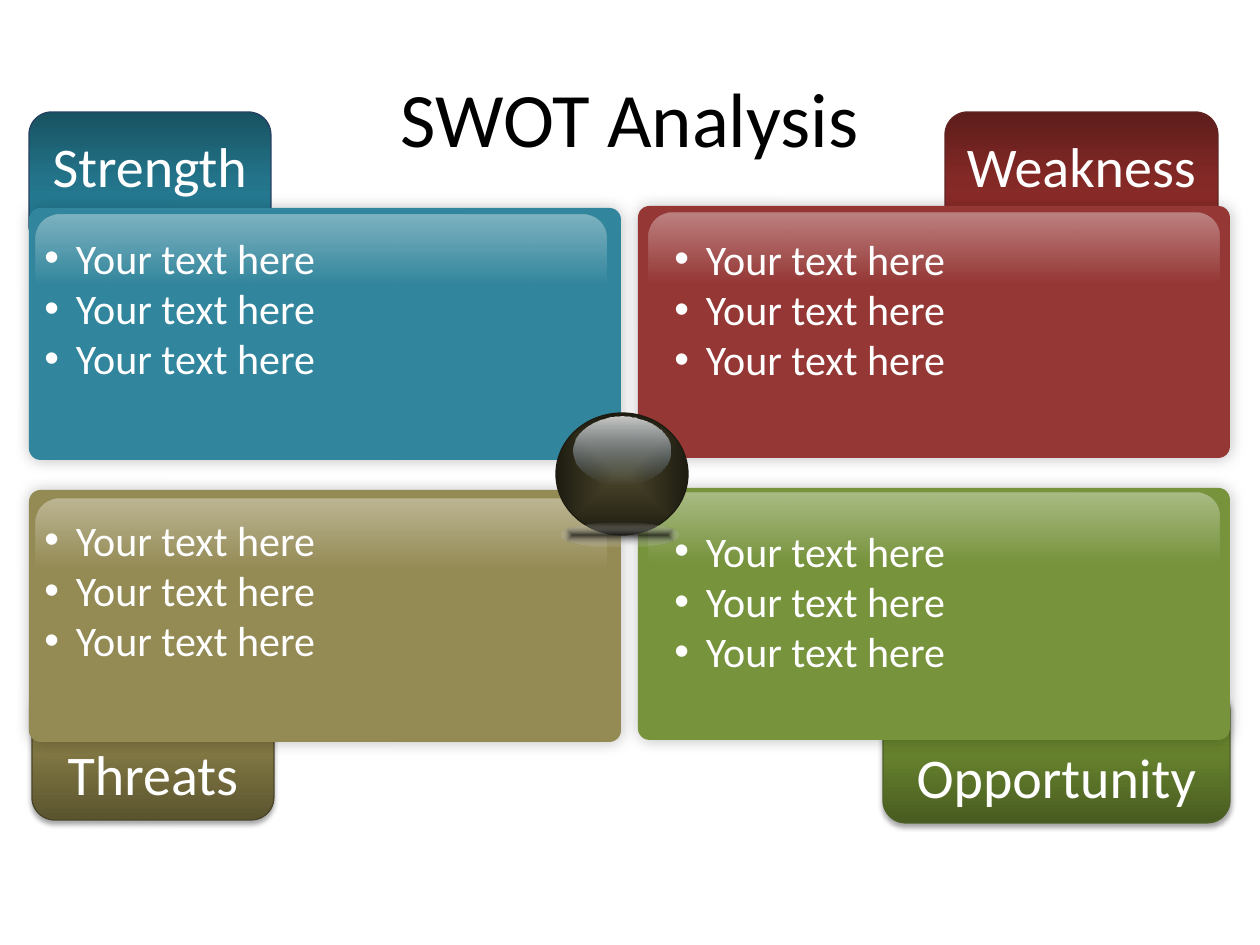
"""Build a SWOT analysis slide with four glossy panels around a dark orb."""
from lxml import etree
from pptx import Presentation
from pptx.dml.color import RGBColor
from pptx.enum.shapes import MSO_SHAPE
from pptx.enum.text import MSO_ANCHOR, MSO_AUTO_SIZE, PP_ALIGN
from pptx.oxml.ns import qn
from pptx.util import Emu, Pt

ROUND, OVAL = MSO_SHAPE.ROUNDED_RECTANGLE, MSO_SHAPE.OVAL
TOP, MIDDLE, BOTTOM = MSO_ANCHOR.TOP, MSO_ANCHOR.MIDDLE, MSO_ANCHOR.BOTTOM
CENTER, FIT_SHAPE = PP_ALIGN.CENTER, MSO_AUTO_SIZE.SHAPE_TO_FIT_TEXT

TITLE = "SWOT Analysis"
BULLETS = ["Your text here"] * 3
QUADRANTS = [
    dict(name="Opportunity", tab=(883, 687, 347), panel=(638, 488),
         text=(662, 519), gloss=(649, 493), upper=False),
    dict(name="Threats", tab=(32, 684, 242), panel=(29, 490),
         text=(32, 508), gloss=(36, 499), upper=False),
    dict(name="Strength", tab=(29, 112, 242), panel=(29, 208),
         text=(32, 226), gloss=(36, 215), upper=True),
    dict(name="Weakness", tab=(945, 112, 273), panel=(638, 206),
         text=(662, 227), gloss=(649, 213), upper=True),
]
TAB_H, PANEL_SIZE, TEXT_SIZE, GLOSS_SIZE = 136, (592, 252), (441, 165), (570, 140)
TITLE_BOX = (63, 38, 1134, 157)
ORB, SHINE, GLOW = (556, 413, 132, 122), (573, 417, 97, 67), (561, 523, 118, 24)

THEME = dict(
    font="Calibri", title="000000", text="FFFFFF",
    title_size=44, tab_size=32, body_size=24,
    tab_shadow=(35, 3.1, 1.8), panel_shadow=(26, 9, 0),
    gloss=[(0, "FFFFFF", 37), (50, "FFFFFF", 0)],
    orb=[(0, "4A452A", 100), (100, "1E1C11", 100)], orb_line="1E1C11",
    shine=[(0, "FFFFFF", 77), (100, "8EB4E3", 0)],
    glow=[(0, "171717", 76), (100, "FFFFFF", 0)],
    panels={
        "Opportunity": ("77933C", "4F6228", ("485B20", "66812D", "799936")),
        "Threats": ("948A54", "4A452A", ("5A542F", "817743", "998D4F")),
        "Strength": ("31859C", "254061", ("185261", "23748A", "298AA3")),
        "Weakness": ("953735", "632523", ("5D1D1B", "842926", "9C302E")),
    },
)


def px(n):
    return Emu(round(n * 914400 / 126))


def add(parent, tag, **attrs):
    return etree.SubElement(parent, qn(tag), {k: str(v) for k, v in attrs.items()})


def add_color(parent, color, alpha):
    clr = add(parent, "a:srgbClr", val=color)
    if alpha < 100:
        add(clr, "a:alpha", val=alpha * 1000)


def set_gradient(sp, stops, angle=None):
    grad = etree.Element(qn("a:gradFill"), rotWithShape="1")
    gs_lst = add(grad, "a:gsLst")
    for pos, color, alpha in stops:
        add_color(add(gs_lst, "a:gs", pos=pos * 1000), color, alpha)
    if angle is None:
        path = add(grad, "a:path", path="shape")
        add(path, "a:fillToRect", l=50000, t=50000, r=50000, b=50000)
    else:
        add(grad, "a:lin", ang=angle * 60000, scaled=0)
    sp._element.spPr.find(qn("a:prstGeom")).addnext(grad)


def set_shadow(sp, alpha, blur, dist):
    effects = sp._element.spPr.find(qn("a:effectLst"))
    shadow = add(effects, "a:outerShdw", blurRad=Pt(blur), dist=Pt(dist),
                 dir=90 * 60000 if dist else 0, algn="ctr", rotWithShape=0)
    add_color(shadow, "000000", alpha)


def add_shape(slide, kind, box, line=None):
    sp = slide.shapes.add_shape(kind, *map(px, box))
    sp.shadow.inherit = False
    if line:
        sp.line.color.rgb = RGBColor.from_string(line)
        sp.line.width = Pt(0.75)
    else:
        sp.line.fill.background()
    return sp


def set_font(p, size, color):
    p.font.name, p.font.size = THEME["font"], Pt(size)
    p.font.color.rgb = RGBColor.from_string(color)


def add_tab(slide, quad, line, colors):
    x, y, w = quad["tab"]
    sp = add_shape(slide, ROUND, (x, y, w, TAB_H), line)
    stops = [(pos, color, 100) for pos, color in zip((0, 50, 100), colors)]
    set_gradient(sp, stops, 90 if quad["upper"] else 270)
    if not quad["upper"]:
        set_shadow(sp, *THEME["tab_shadow"])
    tf = sp.text_frame
    tf.vertical_anchor = TOP if quad["upper"] else BOTTOM
    tf.margin_top = Pt(7.2)
    p = tf.paragraphs[0]
    p.text, p.alignment = quad["name"], CENTER
    set_font(p, THEME["tab_size"], THEME["text"])


def add_panel(slide, box, fill):
    sp = add_shape(slide, ROUND, box)
    sp.adjustments[0] = 0.046
    sp.fill.solid()
    sp.fill.fore_color.rgb = RGBColor.from_string(fill)
    set_shadow(sp, *THEME["panel_shadow"])


def add_bullets(slide, box):
    tf = slide.shapes.add_textbox(*map(px, box)).text_frame
    tf.word_wrap, tf.auto_size = True, FIT_SHAPE
    tf.text = "\n".join(BULLETS)
    for p in tf.paragraphs:
        set_font(p, THEME["body_size"], THEME["text"])
        p_pr = p._p.get_or_add_pPr()
        p_pr.set("marL", str(Pt(18)))
        p_pr.set("indent", str(-Pt(18)))
        bullet = etree.Element(qn("a:buChar"), char="•")
        font = etree.Element(qn("a:buFont"), typeface="Arial")
        p_pr.insert(0, bullet)
        p_pr.insert(0, font)


def add_title(slide):
    s = slide.shapes.title
    s.left, s.top, s.width, s.height = map(px, TITLE_BOX)
    s.text_frame.text = TITLE
    s.text_frame.vertical_anchor = MIDDLE
    p = s.text_frame.paragraphs[0]
    p.alignment = CENTER
    set_font(p, THEME["title_size"], THEME["title"])


def main():
    prs = Presentation()
    prs.slide_width, prs.slide_height = px(1260), px(945)
    slide = prs.slides.add_slide(prs.slide_layouts[5])
    add_title(slide)
    for quad in QUADRANTS:
        fill, line, colors = THEME["panels"][quad["name"]]
        add_tab(slide, quad, line, colors)
        add_panel(slide, quad["panel"] + PANEL_SIZE, fill)
        add_bullets(slide, quad["text"] + TEXT_SIZE)
    for quad in QUADRANTS:
        gloss = add_shape(slide, ROUND, quad["gloss"] + GLOSS_SIZE)
        set_gradient(gloss, THEME["gloss"], 90)
    set_gradient(add_shape(slide, OVAL, ORB, THEME["orb_line"]), THEME["orb"])
    set_gradient(add_shape(slide, OVAL, SHINE), THEME["shine"], 90)
    set_gradient(add_shape(slide, OVAL, GLOW), THEME["glow"])
    prs.save("out.pptx")


if __name__ == "__main__":
    main()
